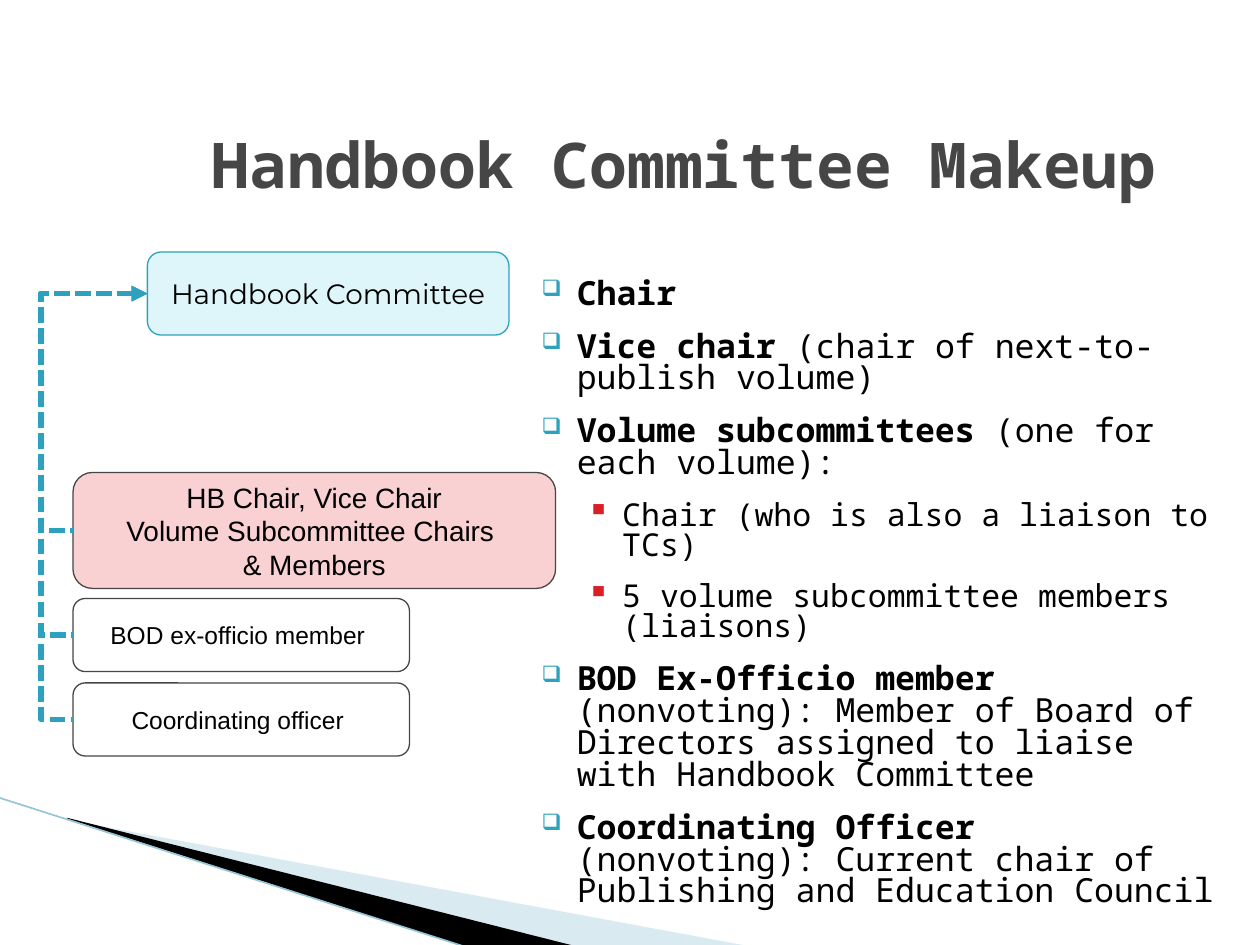
"""Build the Handbook Committee Makeup slide."""
import pptx
import pptx.util
import pptx.dml.color
import pptx.enum.dml
import pptx.enum.shapes
import pptx.enum.text
from lxml import etree
from pptx.util import Inches, Pt

MONO = "Noto Sans Mono"
TEAL, RED, GRAY, BLACK = "2DA2BF", "DA1F28", "464646", "000000"
NS = "http://schemas.openxmlformats.org/drawingml/2006/main"


def paint(color_format, color):
    color_format.rgb = pptx.dml.color.RGBColor.from_string(color)


def add_child(parent, tag, **attributes):
    return etree.SubElement(parent, f"{{{NS}}}{tag}", attributes)


presentation = pptx.Presentation()
presentation.slide_width, presentation.slide_height = Inches(10), Inches(7.5)
slide = presentation.slides.add_slide(presentation.slide_layouts[6])
shapes = slide.shapes

swooshes = [
    ([(0.55, 6.51), (5.95, 7.51), (4.56, 7.51), (0.55, 6.5)], "A0CBDC", "40000"),
    ([(0.53, 6.49), (4.57, 7.51), (3.72, 7.52), (0.54, 6.5)], BLACK, None),
]
for points, color, alpha in swooshes:
    corners = [(Inches(x), Inches(y)) for x, y in points]
    builder = shapes.build_freeform(*corners[0])
    builder.add_line_segments(corners[1:])
    swoosh = builder.convert_to_shape()
    swoosh.shadow.inherit = False
    swoosh.fill.solid()
    paint(swoosh.fill.fore_color, color)
    swoosh.line.fill.background()
    if alpha:
        add_child(swoosh.fill._xPr.find(f".//{{{NS}}}srgbClr"), "alpha", val=alpha)

edge = shapes.add_connector(
    pptx.enum.shapes.MSO_CONNECTOR.STRAIGHT,
    Inches(-0.01), Inches(6.33), Inches(3.71), Inches(7.52))
paint(edge.line.color, "97C5D8")
edge.line.width = Pt(0.95)
add_child(edge._element.spPr, "effectLst")

members = [
    (1, [("Chair", True)]),
    (1, [("Vice chair", True), (" (chair of next-to-publish volume)", False)]),
    (1, [("Volume subcommittees", True), (" (one for each volume):", False)]),
    (2, [("Chair (who is also a liaison to TCs)", False)]),
    (2, [("5 volume subcommittee members (liaisons)", False)]),
    (1, [("BOD Ex-Officio member", True),
         (" (nonvoting): Member of Board of Directors assigned to liaise"
          " with Handbook Committee", False)]),
    (1, [("Coordinating Officer ", True),
         ("(nonvoting): Current chair of Publishing and Education Council", False)]),
]
level_styles = {1: (0.4, "❑", TEAL, "68000", 19), 2: (0.76, "▪", RED, "100000", 18)}
body = shapes.add_textbox(Inches(4.08), Inches(2.17), Inches(5.75), Inches(3.67))
body.text_frame.word_wrap = True
for index, (level, parts) in enumerate(members):
    margin, bullet, bullet_color, bullet_size, size = level_styles[level]
    paragraph = body.text_frame.paragraphs[0] if index == 0 else body.text_frame.add_paragraph()
    paragraph.level = level - 1
    paragraph.line_spacing = 0.8
    paragraph.space_after = Pt(12)
    properties = paragraph._p.get_or_add_pPr()
    properties.set("marL", str(Inches(margin)))
    properties.set("indent", str(Inches(-0.28)))
    add_child(add_child(properties, "buClr"), "srgbClr", val=bullet_color)
    add_child(properties, "buSzPct", val=bullet_size)
    add_child(properties, "buChar", char=bullet)
    for text, bold in parts:
        run = paragraph.add_run()
        run.text = text
        run.font.name, run.font.size, run.font.bold = MONO, Pt(size), bold
        paint(run.font.color, BLACK)

title = shapes.add_textbox(Inches(1.58), Inches(0.78), Inches(7.92), Inches(1.03))
title.text_frame.word_wrap = True
title.text_frame.vertical_anchor = pptx.enum.text.MSO_ANCHOR.MIDDLE
heading = title.text_frame.paragraphs[0].add_run()
heading.text = "Handbook Committee Makeup"
heading.font.name, heading.font.size, heading.font.bold = MONO, Pt(36), True
paint(heading.font.color, GRAY)

boxes = [
    (1.17, 2, 2.87, 0.66, "DEF5FA", TEAL, "Montserrat", 16, ["Handbook Committee"]),
    (0.58, 3.75, 3.83, 0.92, "F9D1D3", GRAY, "Arial", 16,
     ["HB Chair, Vice Chair", "Volume Subcommittee Chairs ", "& Members"]),
    (0.58, 4.75, 2.67, 0.58, "FFFFFF", GRAY, "Arial", 14, ["BOD ex-officio member "]),
    (0.58, 5.42, 2.67, 0.58, "FFFFFF", GRAY, "Arial", 14, ["Coordinating officer "]),
]
chart_boxes = []
for left, top, width, height, fill, outline, font, size, lines in boxes:
    box = shapes.add_shape(
        pptx.enum.shapes.MSO_SHAPE.ROUNDED_RECTANGLE,
        Inches(left), Inches(top), Inches(width), Inches(height))
    box.shadow.inherit = False
    box.fill.solid()
    paint(box.fill.fore_color, fill)
    paint(box.line.color, outline)
    box.line.width = Pt(0.75)
    box.text_frame.word_wrap = False
    box.text_frame.vertical_anchor = pptx.enum.text.MSO_ANCHOR.MIDDLE
    paragraph = box.text_frame.paragraphs[0]
    paragraph.alignment = pptx.enum.text.PP_ALIGN.CENTER
    for number, text in enumerate(lines):
        if number:
            paragraph.add_line_break()
        run = paragraph.add_run()
        run.text = text
        run.font.name, run.font.size = font, Pt(size)
        paint(run.font.color, BLACK)
    chart_boxes.append(box)

committee, *groups = chart_boxes
for group in groups:
    link = shapes.add_connector(
        pptx.enum.shapes.MSO_CONNECTOR.ELBOW,
        committee.left, committee.top + committee.height // 2,
        group.left, group.top + group.height // 2)
    link.begin_connect(committee, 1)
    link.end_connect(group, 1)
    paint(link.line.color, TEAL)
    link.line.width = Pt(3)
    link.line.dash_style = pptx.enum.dml.MSO_LINE.SQUARE_DOT
    add_child(link.line._get_or_add_ln(), "headEnd", type="triangle")
    add_child(link._element.spPr, "effectLst")
    guides = link._element.spPr.find(f".//{{{NS}}}avLst")
    add_child(guides, "gd", name="adj1", fmla="val 142900")

presentation.save("out.pptx")
